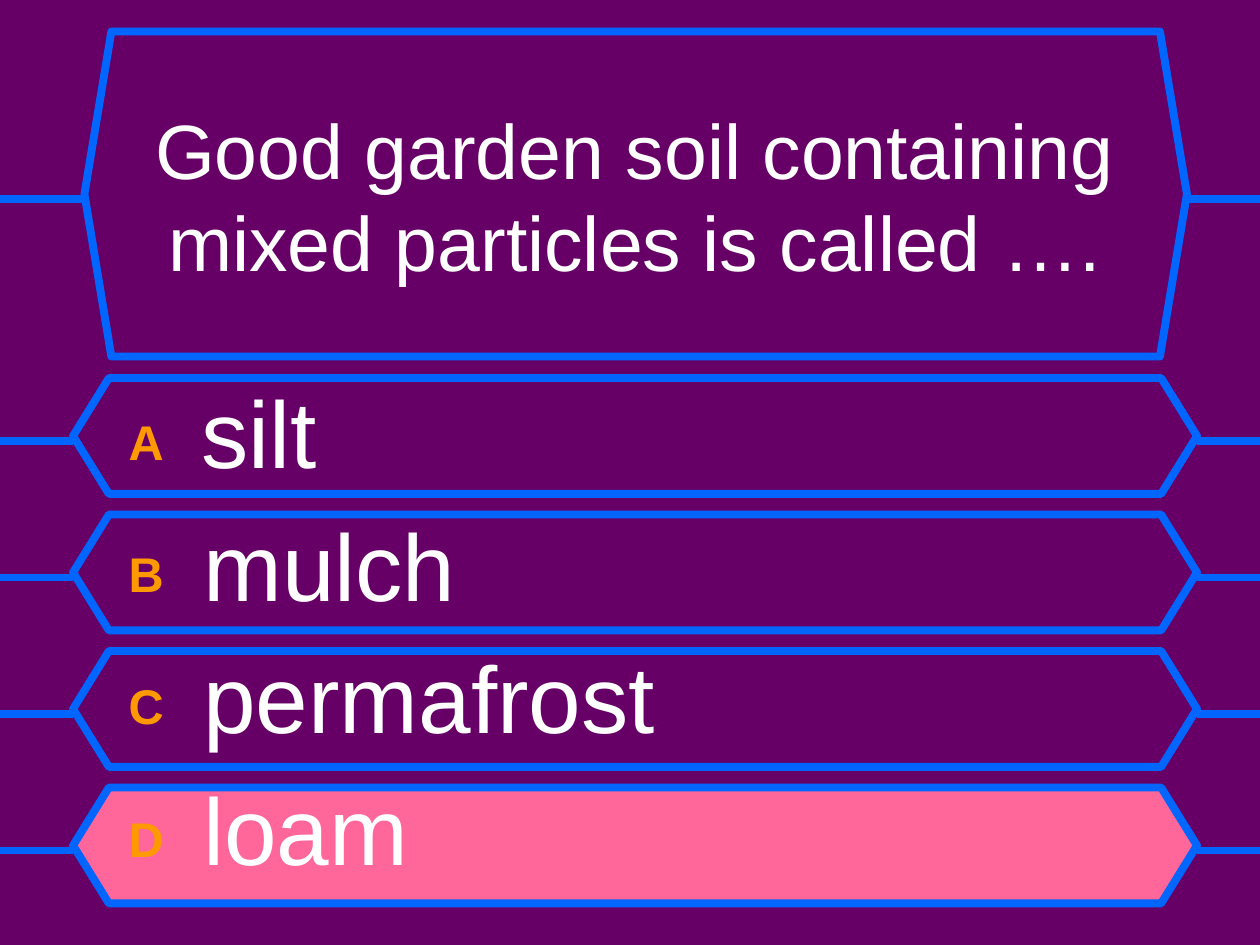
from pptx import Presentation
from pptx.dml.color import RGBColor
from pptx.enum.shapes import MSO_CONNECTOR, MSO_SHAPE
from pptx.enum.text import MSO_ANCHOR, MSO_AUTO_SIZE, PP_ALIGN
from pptx.oxml.ns import qn
from pptx.util import Inches, Pt

QUESTION = "Good garden soil containing mixed particles is called …."
ANSWERS = [("A", "silt"), ("B", "mulch"), ("C", "permafrost"), ("D", "loam")]
CORRECT = "D"

THEME = {
    "font": "Arial",
    "background": RGBColor(0x66, 0x00, 0x66),
    "outline": RGBColor(0x00, 0x66, 0xFF),
    "correct": RGBColor(0xFF, 0x66, 0x99),
    "letter": RGBColor(0xFF, 0x99, 0x00),
    "text": RGBColor(0xFF, 0xFF, 0xFF),
    "question_size": Pt(44),
    "letter_size": Pt(48),
    "answer_size": Pt(54),
    "line": Pt(4.5),
}

SLIDE_W, SLIDE_H = 10, 7.5
QUESTION_FRAME = (0.67, 0.25, 8.75, 2.58)
QUESTION_WIRE = 1.58
ANSWER_LEFT, ANSWER_TOP, ANSWER_W, ANSWER_H = 0.58, 3, 8.92, 0.92
ANSWER_PITCH = 3.25 / 3
ANSWER_WIRE = 0.5  # below the top of its frame


def add_wire(slide, start, end, y):
    wire = slide.shapes.add_connector(
        MSO_CONNECTOR.STRAIGHT, Inches(start), Inches(y), Inches(end), Inches(y))
    wire.line.color.rgb = THEME["outline"]
    wire.line.width = THEME["line"]
    properties = wire._element.spPr
    properties.append(properties.makeelement(qn("a:effectLst"), {}))


def add_frame(slide, box, point, wire_y, fill):
    """Draw a pointed frame with a wire to each edge of the slide."""
    frame = slide.shapes.add_shape(MSO_SHAPE.HEXAGON, *map(Inches, box))
    frame.adjustments[0] = point
    frame.shadow.inherit = False
    frame.fill.solid()
    frame.fill.fore_color.rgb = fill
    frame.line.color.rgb = THEME["outline"]
    frame.line.width = THEME["line"]
    left, width = box[0], box[2]
    add_wire(slide, left, 0, wire_y)
    add_wire(slide, SLIDE_W, left + width, wire_y)


def place(placeholder, box, anchor):
    """Position a placeholder and bring it to the front."""
    placeholder.left, placeholder.top, placeholder.width, placeholder.height = map(Inches, box)
    frame = placeholder.text_frame
    frame.word_wrap = True
    frame.auto_size = MSO_AUTO_SIZE.NONE
    frame.vertical_anchor = anchor
    placeholder._element.getparent().append(placeholder._element)
    return frame


def format_answer(paragraph):
    """Hang the indent, set 20% space before and drop the bullet."""
    properties = paragraph._p.get_or_add_pPr()
    properties.set("marL", str(Inches(0.38)))
    properties.set("indent", str(Inches(-0.38)))
    before = properties.makeelement(qn("a:spcBef"), {})
    before.append(before.makeelement(qn("a:spcPct"), {"val": "20000"}))
    properties.append(before)
    properties.append(properties.makeelement(qn("a:buNone"), {}))


def add_run(paragraph, text, size, color):
    run = paragraph.add_run()
    run.text = text
    run.font.name = THEME["font"]
    run.font.size = size
    run.font.color.rgb = color
    return run


def main():
    prs = Presentation()
    prs.slide_width, prs.slide_height = Inches(SLIDE_W), Inches(SLIDE_H)
    slide = prs.slides.add_slide(prs.slide_layouts[1])
    slide.background.fill.solid()
    slide.background.fill.fore_color.rgb = THEME["background"]

    add_frame(slide, QUESTION_FRAME, 0.083, QUESTION_WIRE, THEME["background"])
    for row, (letter, _) in enumerate(ANSWERS):
        top = ANSWER_TOP + row * ANSWER_PITCH
        fill = THEME["correct" if letter == CORRECT else "background"]
        add_frame(slide, (ANSWER_LEFT, top, ANSWER_W, ANSWER_H), 0.309,
                  top + ANSWER_WIRE, fill)

    question = place(slide.shapes.title, (0.83, 0.42, 8.42, 2.25), MSO_ANCHOR.MIDDLE)
    question.text = QUESTION
    heading = question.paragraphs[0]
    heading.alignment = PP_ALIGN.CENTER
    heading.font.name = THEME["font"]
    heading.font.size = THEME["question_size"]
    heading.font.color.rgb = THEME["text"]

    answers = place(slide.placeholders[1], (0.92, 2.92, 8.33, 4.33), MSO_ANCHOR.TOP)
    for row, (letter, answer) in enumerate(ANSWERS):
        paragraph = answers.add_paragraph() if row else answers.paragraphs[0]
        format_answer(paragraph)
        label = add_run(paragraph, f"{letter} ", THEME["letter_size"], THEME["letter"])
        label.font.bold = True
        label.font._element.set("baseline", "10000")
        add_run(paragraph, f" {answer}", THEME["answer_size"], THEME["text"])

    prs.save("out.pptx")


if __name__ == "__main__":
    main()
